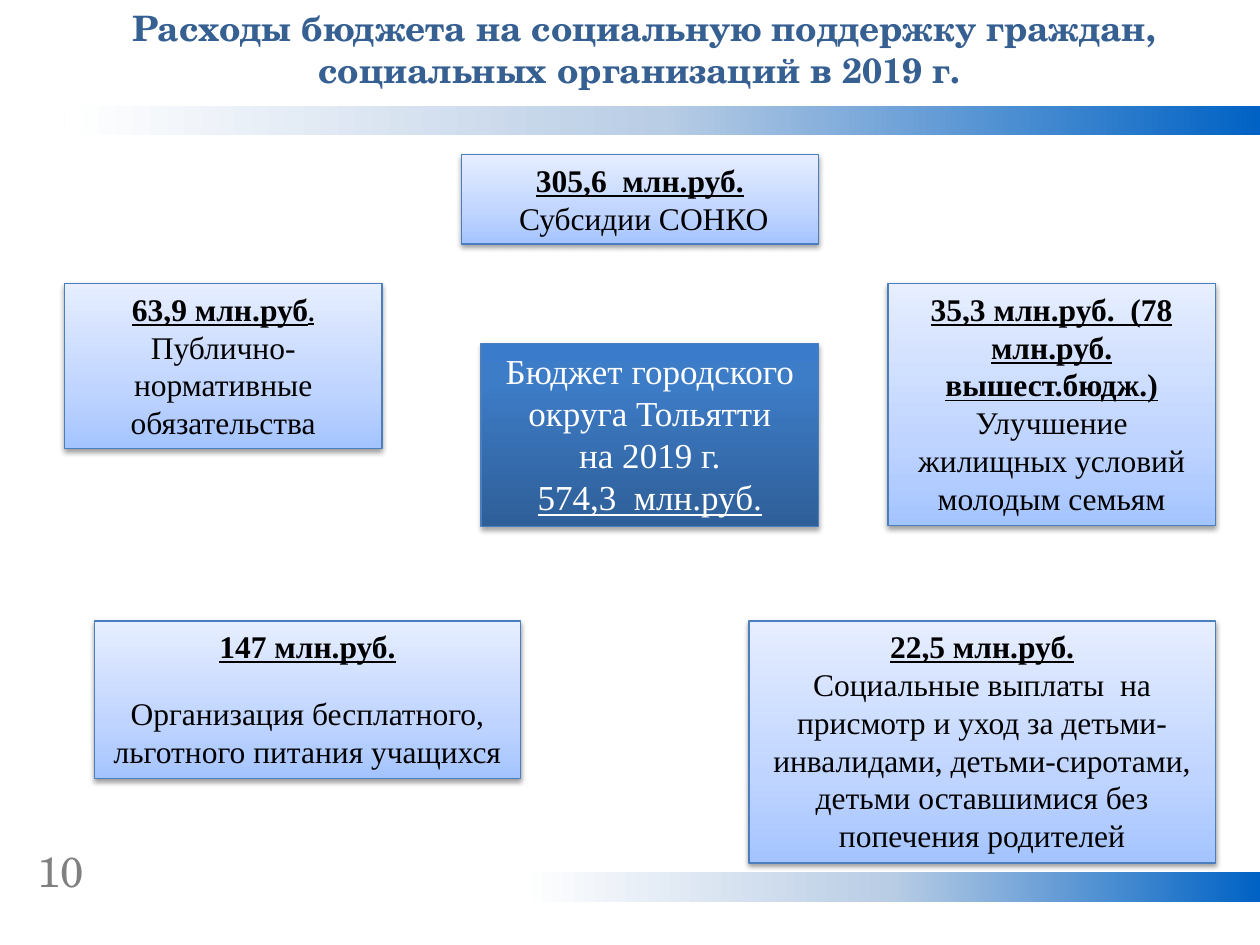
from lxml import etree
from pptx import Presentation
from pptx import util as u
from pptx.dml.color import RGBColor
from pptx.enum import shapes, text
from pptx.oxml.ns import qn

COLORS = {
    "title": "376092", "number": "808080", "dark": "000000", "light": "FFFFFF",
    "border": "4B7EBC", "shadow": "000000",
}
GRADIENTS = {
    "band": [(0, "0062C4"), (50, "B9CDE5"), (100, "FFFFFF")],
    "expense": [(0, "A4C4FF"), (35, "BFD4FF"), (100, "E6EEFF")],
    "budget": [(0, "2F5F99"), (80, "3D7CC7"), (100, "3A7CCB")],
}
SERIF, HEADING = "Times New Roman", "TeX Gyre Schola"
SLIDE_WIDTH, SLIDE_HEIGHT = 25.4, 19.05
GAP_BEFORE_LABEL = 16.7

# box in cm (left, top, width, height), amount, smaller ending, label, gap in points
EXPENSES = [
    ((1.3, 5.72, 6.4, 3.33), "63,9 млн.руб", ".",
     "Публично-нормативные обязательства", 0),
    ((17.9, 5.72, 6.6, 4.88), "35,3 млн.руб.  (78 млн.руб. вышест.бюдж.)", "",
     "Улучшение жилищных условий молодым семьям", 0),
    ((9.3, 3.12, 7.2, 1.8), "305,6  млн.руб.", "", " Субсидии СОНКО", 0),
    ((15.1, 12.52, 9.4, 4.88), "22,5 млн.руб.", "",
     "Социальные выплаты  на присмотр и уход за детьми-инвалидами, "
     "детьми-сиротами, детьми оставшимися без попечения родителей", 0),
    ((1.9, 12.52, 8.6, 3.17), "147 млн.руб.", "",
     "Организация бесплатного, льготного питания учащихся", GAP_BEFORE_LABEL),
]


def rgb(name):
    return RGBColor.from_string(COLORS[name])


def in_cm(box):
    return [u.Cm(length) for length in box]


def add_color(parent, hex_color):
    return etree.SubElement(parent, qn("a:srgbClr"), val=hex_color)


def fill_gradient(shape, gradient, angle):
    """Fill with any number of stops; the angle runs counter-clockwise."""
    shape.fill.gradient()
    shape.fill.gradient_angle = angle
    stops = shape._element.spPr.find(qn("a:gradFill")).find(qn("a:gsLst"))
    for stop in list(stops):
        stops.remove(stop)
    for position, hex_color in GRADIENTS[gradient]:
        stop = etree.SubElement(stops, qn("a:gs"), pos=str(position * 1000))
        add_color(stop, hex_color)


def add_shadow(shape, opacity, distance):
    effects = shape._element.spPr.find(qn("a:effectLst"))
    shadow = etree.SubElement(
        effects, qn("a:outerShdw"), blurRad=str(u.Pt(3.1)),
        dist=str(u.Pt(distance)), dir="5400000", rotWithShape="0")
    color = add_color(shadow, COLORS["shadow"])
    etree.SubElement(color, qn("a:alpha"), val=str(opacity * 1000))


def add_rectangle(slide, box, gradient, angle):
    rectangle = slide.shapes.add_shape(shapes.MSO_SHAPE.RECTANGLE, *in_cm(box))
    rectangle.shadow.inherit = False
    fill_gradient(rectangle, gradient, angle)
    return rectangle


def format_run(run, size, color, font=SERIF, bold=False, underline=False):
    run.font.name = font
    run.font.size = u.Pt(size)
    run.font.color.rgb = rgb(color)
    run.font.bold = bold
    run.font.underline = underline


def add_band(slide, box):
    """Place a band that fades out to the left."""
    band = add_rectangle(slide, box, "band", 180)
    band.line.fill.background()


def add_card(slide, box, gradient, opacity, distance, lines):
    """Place a bordered, shadowed card and return its centred paragraphs."""
    card = add_rectangle(slide, box, gradient, 90)
    card.line.color.rgb = rgb("border")
    card.line.width = u.Pt(0.75)
    add_shadow(card, opacity, distance)
    frame = card.text_frame
    frame.word_wrap = True
    frame.vertical_anchor = text.MSO_ANCHOR.TOP
    frame.text = "\n".join(lines)
    for paragraph in frame.paragraphs:
        paragraph.alignment = text.PP_ALIGN.CENTER
    return frame.paragraphs


def add_expense(slide, box, amount, ending, label, gap):
    amount_line, label_line = add_card(slide, box, "expense", 38, 1.6, [amount, label])
    format_run(amount_line.runs[0], 18, "dark", bold=True, underline=True)
    if ending:
        ending_run = amount_line.add_run()
        ending_run.text = ending
        format_run(ending_run, 14, "dark", bold=True, underline=True)
    format_run(label_line.runs[0], 18, "dark")
    label_line.space_before = u.Pt(gap)


def add_budget(slide, box):
    total = "574,3  млн.руб."
    lines = ["Бюджет городского округа Тольятти", "на 2019 г.", total]
    for paragraph in add_card(slide, box, "budget", 35, 1.8, lines):
        format_run(paragraph.runs[0], 20, "light", underline=paragraph.text == total)


def add_heading_text(slide, box, wording, size, color, bold, alignment):
    heading = slide.shapes.add_textbox(*in_cm(box)).text_frame
    heading.word_wrap = True
    heading.text = wording
    paragraph = heading.paragraphs[0]
    paragraph.alignment = alignment
    format_run(paragraph.runs[0], size, color, HEADING, bold)


def main():
    deck = Presentation()
    deck.slide_width, deck.slide_height = u.Cm(SLIDE_WIDTH), u.Cm(SLIDE_HEIGHT)
    slide = deck.slides.add_slide(deck.slide_layouts[6])
    for left, top in [(1.3, 2.13), (10.5, 17.58)]:
        add_band(slide, (left, top, SLIDE_WIDTH - left, 0.6))
    add_heading_text(slide, (0.5, 16.92, 1.98, 1.27), "10", 24, "number",
                     False, text.PP_ALIGN.LEFT)
    for expense in EXPENSES:
        add_expense(slide, *expense)
    add_budget(slide, (9.7, 6.93, 6.8, 3.68))
    add_heading_text(
        slide, (0.89, 0, 24.2, 1.96),
        "Расходы бюджета на социальную поддержку граждан, "
        "социальных организаций в 2019 г. ",
        20, "title", True, text.PP_ALIGN.CENTER)
    deck.save("out.pptx")


if __name__ == "__main__":
    main()
